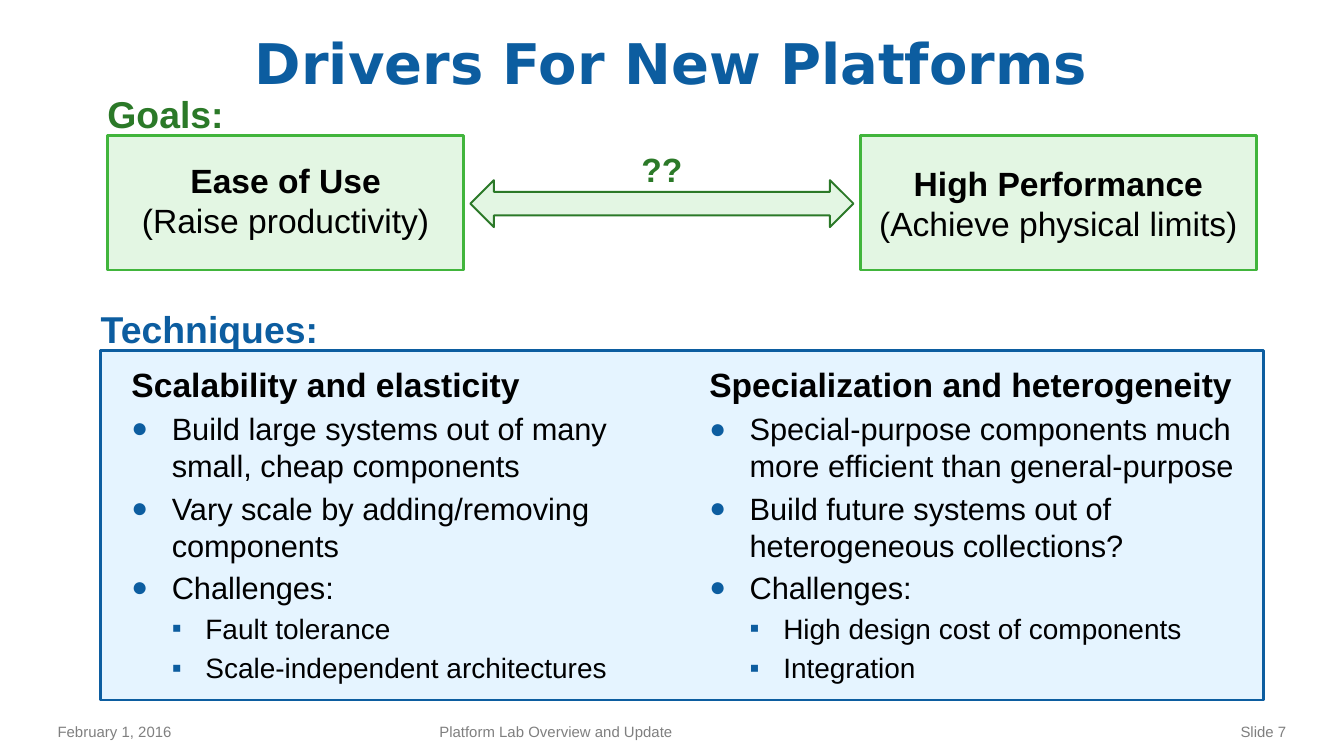
from dataclasses import dataclass

import lxml.etree
import pptx
import pptx.dml.color
import pptx.enum.shapes
import pptx.enum.text
import pptx.oxml.ns
import pptx.util

Inches = pptx.util.Inches
Pt = pptx.util.Pt
RGBColor = pptx.dml.color.RGBColor
Align = pptx.enum.text.PP_ALIGN
Anchor = pptx.enum.text.MSO_ANCHOR
ShapeType = pptx.enum.shapes.MSO_SHAPE

SLIDE_WIDTH = 10
SLIDE_HEIGHT = SLIDE_WIDTH * 9 / 16

BLUE = RGBColor(0x0C, 0x5D, 0xA0)
PALE_BLUE = RGBColor(0xE5, 0xF4, 0xFF)
GREEN = RGBColor(0x41, 0xB5, 0x3C)
DARK_GREEN = RGBColor(0x2B, 0x79, 0x28)
PALE_GREEN = RGBColor(0xE3, 0xF6, 0xE3)
BLACK = RGBColor(0, 0, 0)
GRAY = RGBColor(0x7F, 0x7F, 0x7F)


@dataclass(frozen=True)
class Box:
    left: float
    top: float
    width: float
    height: float

    def lengths(self):
        return [Inches(v) for v in (self.left, self.top, self.width, self.height)]


@dataclass(frozen=True)
class Goal:
    name: str
    detail: str
    frame: Box
    text_box: Box


@dataclass(frozen=True)
class Technique:
    heading: str
    points: tuple[str, ...]
    challenges: tuple[str, ...]
    box: Box


@dataclass(frozen=True)
class Label:
    text: str
    box: Box
    size: float
    color: RGBColor
    bold: bool = True
    align: Align = Align.LEFT
    anchor: Anchor = Anchor.TOP
    inset: float = 0
    wrap: bool = True


@dataclass(frozen=True)
class BulletStyle:
    symbol: str
    level: int
    indent: float
    hanging: float
    scale: int
    size: float


POINT = BulletStyle("●", 0, 0.3, 0.3, 90, 16.5)
CHALLENGE = BulletStyle("▪", 1, 0.55, 0.25, 100, 15)

GOALS = (
    Goal("High Performance", "(Achieve physical limits)",
         Box(6.4, 1.01, 2.95, 1), Box(6.52, 1.21, 2.71, 0.61)),
    Goal("Ease of Use", "(Raise productivity)",
         Box(0.8, 1.01, 2.65, 1), Box(0.9, 1.19, 2.45, 0.65)),
)

TECHNIQUES = (
    Technique("Specialization and heterogeneity",
              ("Special-purpose components much more efficient than general-purpose",
               "Build future systems out of heterogeneous collections?"),
              ("High design cost of components", "Integration"),
              Box(5.18, 2.66, 4.17, 2.45)),
    Technique("Scalability and elasticity",
              ("Build large systems out of many small, cheap components",
               "Vary scale by adding/removing components"),
              ("Fault tolerance", "Scale-independent architectures"),
              Box(0.88, 2.66, 3.92, 2.5)),
)

FOOTER = dict(size=8, color=GRAY, bold=False, anchor=Anchor.MIDDLE, inset=0.1)
LABELS = (
    Label("Goals:", Box(0.8, 0.68, 0.87, 0.34), 20, DARK_GREEN, wrap=False),
    Label("Techniques:", Box(0.75, 2.28, 1.63, 0.34), 20, BLUE, wrap=False),
    Label("??", Box(4.75, 1.11, 0.35, 0.3), 18, DARK_GREEN, align=Align.CENTER),
    Label("February 1, 2016", Box(0.33, 5.32, 2.5, 0.24), **FOOTER),
    Label("Platform Lab Overview and Update", Box(3.17, 5.32, 3.75, 0.24), **FOOTER),
    Label("Slide 7", Box(7.17, 5.32, 2.5, 0.24), align=Align.RIGHT, **FOOTER),
)


def write(paragraph, text: str, *, size: float, color: RGBColor = BLACK,
          bold: bool = False, font: str = "Arial", align: Align = Align.LEFT,
          before: float = 0) -> None:
    """Append one formatted run to the paragraph."""
    paragraph.alignment = align
    paragraph.space_before = Pt(before)
    run = paragraph.add_run()
    run.text = text
    run.font.size = Pt(size)
    run.font.bold = bold
    run.font.name = font
    run.font.color.rgb = color


def set_frame(frame, inset: float, anchor: Anchor = Anchor.TOP, wrap: bool = True) -> None:
    frame.word_wrap = wrap
    frame.auto_size = pptx.enum.text.MSO_AUTO_SIZE.NONE
    frame.vertical_anchor = anchor
    frame.margin_left = frame.margin_right = Inches(inset)
    frame.margin_top = frame.margin_bottom = Inches(inset / 2)


def add_text_frame(slide, box: Box, inset: float = 0, **options):
    frame = slide.shapes.add_textbox(*box.lengths()).text_frame
    set_frame(frame, inset, **options)
    return frame


def add_panel(slide, kind: ShapeType, box: Box, fill: RGBColor, line: RGBColor,
              weight: float = 1.5) -> None:
    shape = slide.shapes.add_shape(kind, *box.lengths())
    shape.shadow.inherit = False
    shape.fill.solid()
    shape.fill.fore_color.rgb = fill
    shape.line.color.rgb = line
    shape.line.width = Pt(weight)


def add_bullet(frame, text: str, style: BulletStyle) -> None:
    paragraph = frame.add_paragraph()
    paragraph.level = style.level
    write(paragraph, text, size=style.size, before=3)
    properties = paragraph._p.get_or_add_pPr()
    properties.set("marL", str(Inches(style.indent)))
    properties.set("indent", str(-Inches(style.hanging)))

    def add(parent, tag: str, **attributes: str):
        return lxml.etree.SubElement(parent, pptx.oxml.ns.qn(tag), attributes)

    add(add(properties, "a:buClr"), "a:srgbClr", val=str(BLUE))
    add(properties, "a:buSzPct", val=str(style.scale * 1000))
    add(properties, "a:buFont", typeface="Arial")
    add(properties, "a:buChar", char=style.symbol)


def add_goal(slide, goal: Goal) -> None:
    add_panel(slide, ShapeType.RECTANGLE, goal.frame, PALE_GREEN, GREEN)
    paragraph = add_text_frame(slide, goal.text_box).paragraphs[0]
    write(paragraph, goal.name, size=18, bold=True, align=Align.CENTER)
    paragraph.add_line_break()
    write(paragraph, goal.detail, size=18, align=Align.CENTER)


def add_technique(slide, technique: Technique) -> None:
    frame = add_text_frame(slide, technique.box, inset=0.1)
    write(frame.paragraphs[0], technique.heading, size=18, bold=True, before=9)
    for point in (*technique.points, "Challenges:"):
        add_bullet(frame, point, POINT)
    for challenge in technique.challenges:
        add_bullet(frame, challenge, CHALLENGE)


def add_label(slide, label: Label) -> None:
    frame = add_text_frame(slide, label.box, label.inset, anchor=label.anchor, wrap=label.wrap)
    write(frame.paragraphs[0], label.text, size=label.size, color=label.color,
          bold=label.bold, align=label.align)


def set_title(slide, text: str, box: Box) -> None:
    title = slide.shapes.title
    title.left, title.top, title.width, title.height = box.lengths()
    set_frame(title.text_frame, 0.1, Anchor.MIDDLE)
    write(title.text_frame.paragraphs[0], text, size=30, color=BLUE, bold=True,
          font="DejaVu Sans", align=Align.CENTER)


def main() -> None:
    presentation = pptx.Presentation()
    presentation.slide_width = Inches(SLIDE_WIDTH)
    presentation.slide_height = Inches(SLIDE_HEIGHT)
    slide = presentation.slides.add_slide(presentation.slide_layouts[5])

    set_title(slide, "Drivers For New Platforms", Box(0.33, 0.16, 9.33, 0.6))
    add_panel(slide, ShapeType.RECTANGLE, Box(0.75, 2.61, 8.65, 2.6), PALE_BLUE, BLUE)
    for technique in TECHNIQUES:
        add_technique(slide, technique)
    for goal in GOALS:
        add_goal(slide, goal)
    add_panel(slide, ShapeType.LEFT_RIGHT_ARROW, Box(3.5, 1.34, 2.85, 0.35),
              PALE_GREEN, DARK_GREEN, weight=1)
    for label in LABELS:
        add_label(slide, label)
    presentation.save("out.pptx")


if __name__ == "__main__":
    main()
